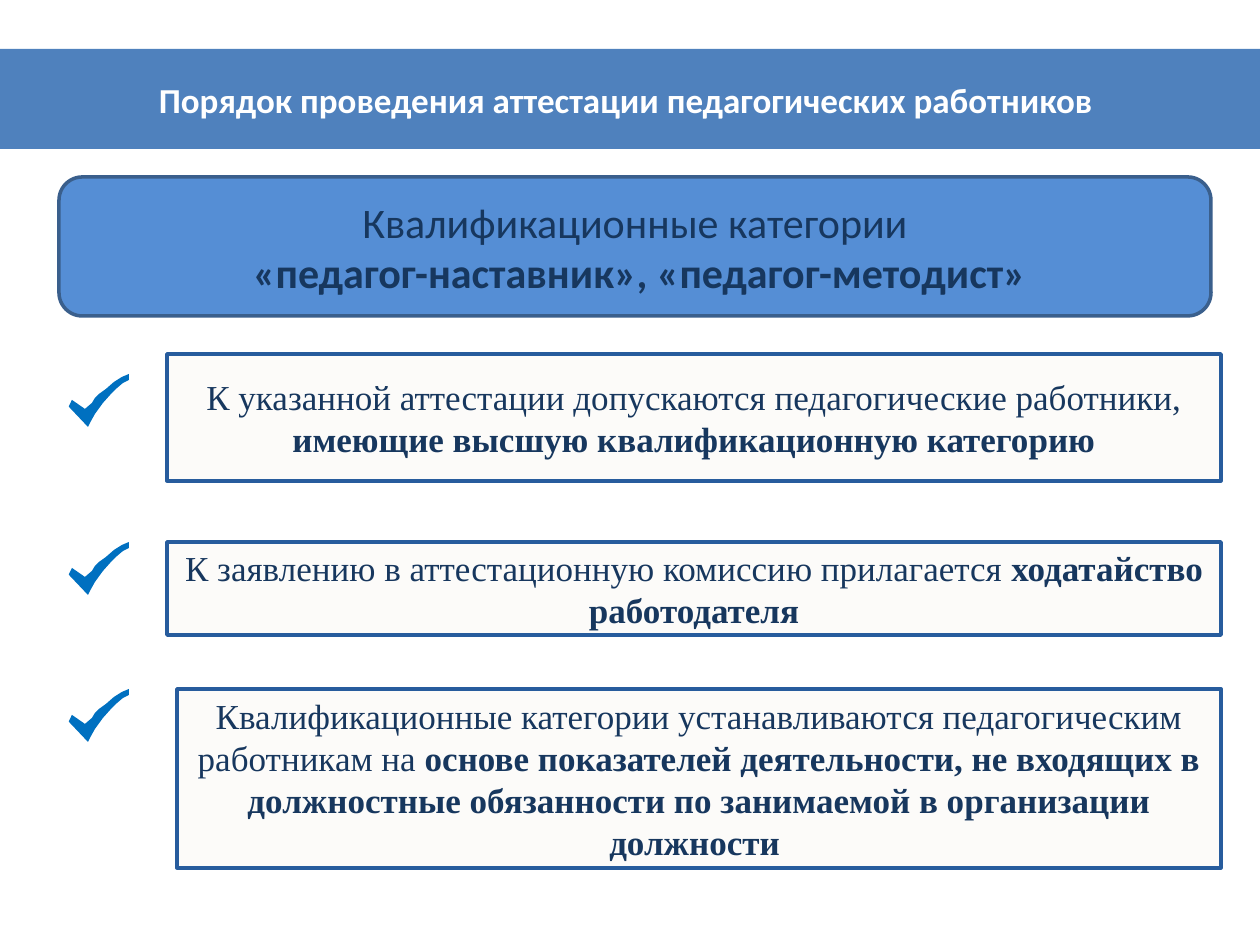
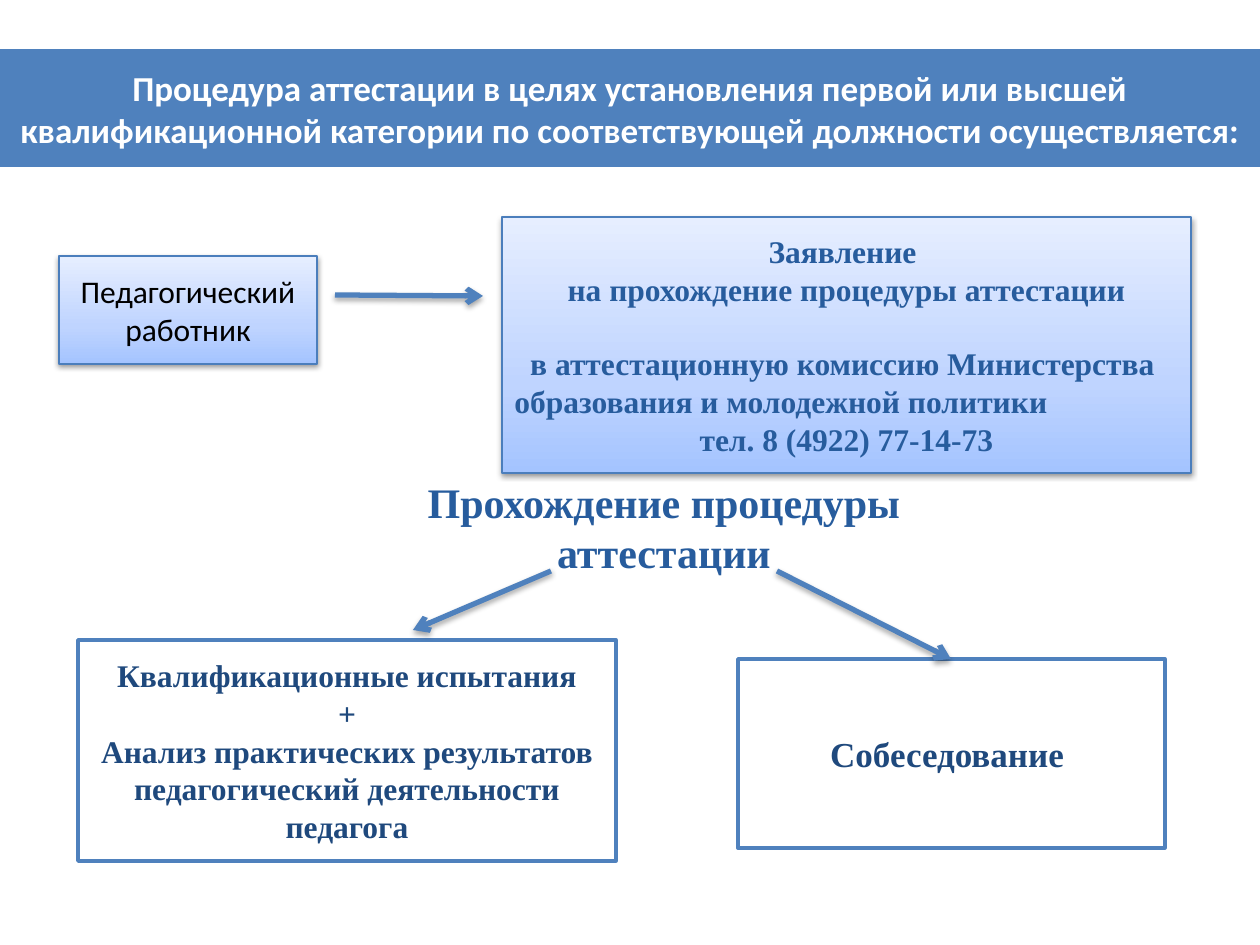
"""Build two slides on the certification of teaching staff."""
import dataclasses

import lxml.etree
import pptx
import pptx.dml.color
import pptx.enum.shapes
import pptx.enum.text
import pptx.oxml.ns
import pptx.util

EMU_PER_PX = 914400 / 126
SHAPES = pptx.enum.shapes.MSO_SHAPE
ALIGN = pptx.enum.text.PP_ALIGN
CHECK_MARK = [
    (60, 0), (53, 3), (45, 8), (37, 15), (30, 20), (26, 24), (23, 29),
    (16, 35), (3, 26), (0, 32), (0, 33), (19, 53), (21, 49), (26, 40),
    (34, 29), (42, 20), (47, 15), (54, 9), (60, 6),
]


@dataclasses.dataclass(frozen=True)
class Style:
    font: str
    size: int
    color: str
    bold: bool = False


@dataclasses.dataclass(frozen=True)
class Theme:
    band: str = "4F81BD"
    banner: str = "558ED5"
    banner_edge: str = "3A5F8C"
    card: str = "FCFBF9"
    card_edge: str = "275C9D"
    check: str = "0070C0"
    white: str = "FFFFFF"
    gradient_edge: str = "4B7EBC"
    gradient: tuple = ((0, "A4C4FF"), (35, "BFD4FF"), (100, "E6EEFF"))
    title: Style = Style("Calibri", 20, "FFFFFF", True)
    category: Style = Style("Calibri", 24, "17375E")
    rule: Style = Style("Times New Roman", 20, "17375E")
    person: Style = Style("Calibri", 18, "000000")
    request: Style = Style("Times New Roman", 18, "275C9D", True)
    stage: Style = Style("Times New Roman", 24, "275C9D", True)
    exam: Style = Style("Times New Roman", 18, "1F497D", True)
    interview: Style = Style("Times New Roman", 20, "1F497D", True)


THEME = Theme()


def px(length):
    return pptx.util.Emu(round(length * EMU_PER_PX))


def rgb(color):
    return pptx.dml.color.RGBColor.from_string(color)


def add_xml(parent, tag, **attributes):
    return lxml.etree.SubElement(parent, pptx.oxml.ns.qn(tag), attributes)


def add_shadow(effects, opacity, distance):
    shadow = add_xml(effects, "a:outerShdw", blurRad="40000",
                     dist=str(pptx.util.Pt(distance)), dir="5400000",
                     rotWithShape="0")
    color = add_xml(shadow, "a:srgbClr", val="000000")
    add_xml(color, "a:alpha", val=str(opacity * 1000))


def write(shape, style, paragraphs):
    """Fill a shape with paragraphs, each a text or a list of (text, bold)."""
    frame = shape.text_frame
    frame.word_wrap = True
    frame.vertical_anchor = pptx.enum.text.MSO_ANCHOR.MIDDLE
    for index, spans in enumerate(paragraphs):
        para = frame.paragraphs[0] if index == 0 else frame.add_paragraph()
        para.alignment = ALIGN.CENTER
        if isinstance(spans, str):
            spans = [(spans, style.bold)]
        for text, bold in spans:
            span = para.add_run()
            span.text = text
            span.font.bold = bold
        for font in (para.font, *(span.font for span in para.runs)):
            font.name = style.font
            font.size = pptx.util.Pt(style.size)
            font.color.rgb = rgb(style.color)


def add_box(page, place, style, paragraphs, fill, edge=None, width=2,
            kind=SHAPES.RECTANGLE):
    box = page.shapes.add_shape(kind, *map(px, place))
    box.shadow.inherit = False
    box.fill.solid()
    box.fill.fore_color.rgb = rgb(fill)
    if edge:
        box.line.color.rgb = rgb(edge)
        box.line.width = pptx.util.Pt(width)
    else:
        box.line.fill.background()
    write(box, style, paragraphs)
    return box


def add_title(page, height, text):
    add_box(page, (0, 49, 1260, height), THEME.title, [text], THEME.band)


def add_gradient_box(page, place, style, paragraphs):
    box = add_box(page, place, style, paragraphs, THEME.white,
                  THEME.gradient_edge, 0.75)
    box.fill.gradient()
    box.fill.gradient_angle = 90
    properties = box._element.spPr
    stops = properties.find(".//" + pptx.oxml.ns.qn("a:gsLst"))
    for stop in list(stops):
        stops.remove(stop)
    for position, color in THEME.gradient:
        stop = add_xml(stops, "a:gs", pos=str(position * 1000))
        add_xml(stop, "a:srgbClr", val=color)
    add_shadow(properties.find(pptx.oxml.ns.qn("a:effectLst")), 38, 1.6)
    return box


def add_check(page, left, top):
    builder = page.shapes.build_freeform(*CHECK_MARK[0], scale=EMU_PER_PX)
    builder.add_line_segments(CHECK_MARK[1:], close=True)
    check = builder.convert_to_shape(px(left), px(top))
    check.shadow.inherit = False
    check.fill.solid()
    check.fill.fore_color.rgb = rgb(THEME.check)
    check.line.fill.background()


def add_arrow(page, start, end):
    arrow = page.shapes.add_connector(
        pptx.enum.shapes.MSO_CONNECTOR.STRAIGHT, *map(px, start + end))
    arrow.line.color.rgb = rgb(THEME.band)
    arrow.line.width = pptx.util.Pt(3)
    properties = arrow._element.spPr
    add_xml(properties.find(pptx.oxml.ns.qn("a:ln")), "a:tailEnd", type="arrow")
    add_shadow(add_xml(properties, "a:effectLst"), 35, 1.8)


def add_categories_page(page):
    add_title(page, 100,
              "Порядок проведения аттестации педагогических работников ")
    add_box(page, (59, 177, 1152, 139), THEME.category,
            ["Квалификационные категории",
             [(" ", False), ("«педагог-наставник», «педагог-методист»", True)]],
            THEME.banner, THEME.banner_edge, kind=SHAPES.ROUNDED_RECTANGLE)
    right = 1221
    rules = [
        (167, 354, 127, 374,
         "К указанной аттестации допускаются педагогические работники, ",
         "имеющие высшую квалификационную категорию"),
        (167, 542, 93, 542,
         "К заявлению в аттестационную комиссию прилагается ",
         "ходатайство работодателя"),
        (177, 689, 179, 689,
         "Квалификационные категории устанавливаются педагогическим "
         "работникам на ",
         "основе показателей деятельности, не входящих в должностные "
         "обязанности по занимаемой в организации должности "),
    ]
    for left, top, height, check_top, plain, strong in rules:
        add_box(page, (left, top, right - left, height), THEME.rule,
                [[(plain, False), (strong, True)]],
                THEME.card, THEME.card_edge)
        add_check(page, 69, check_top)


def add_procedure_page(page):
    add_title(page, 118,
              "Процедура аттестации в целях установления первой или высшей "
              "квалификационной категории по соответствующей должности "
              "осуществляется:")
    add_gradient_box(page, (59, 256, 258, 108), THEME.person,
                     ["Педагогический работник"])
    request = add_gradient_box(
        page, (502, 217, 689, 256), THEME.request,
        ["Заявление ",
         "на прохождение процедуры аттестации",
         "в аттестационную комиссию Министерства ",
         "образования и молодежной политики",
         "тел. 8 (4922) 77-14-73"])
    commission, ministry = request.text_frame.paragraphs[2:4]
    commission.space_before = pptx.util.Pt(21)
    ministry.alignment = ALIGN.LEFT
    add_box(page, (78, 640, 538, 221), THEME.exam,
            ["Квалификационные испытания", "+",
             "Анализ практических результатов педагогический деятельности "
             "педагога"],
            THEME.white, THEME.band)
    add_box(page, (738, 659, 427, 189), THEME.interview, ["Собеседование "],
            THEME.white, THEME.band)
    stage = page.shapes.add_textbox(*map(px, (393, 483, 542, 88)))
    write(stage, THEME.stage, ["Прохождение процедуры аттестации"])
    add_arrow(page, (551, 571), (413, 630))
    add_arrow(page, (777, 571), (951, 659))
    add_arrow(page, (335, 295), (483, 296))


def main():
    deck = pptx.Presentation()
    deck.slide_width, deck.slide_height = px(1260), px(945)
    for fill_page in (add_categories_page, add_procedure_page):
        fill_page(deck.slides.add_slide(deck.slide_layouts[6]))
    deck.save("out.pptx")


if __name__ == "__main__":
    main()
